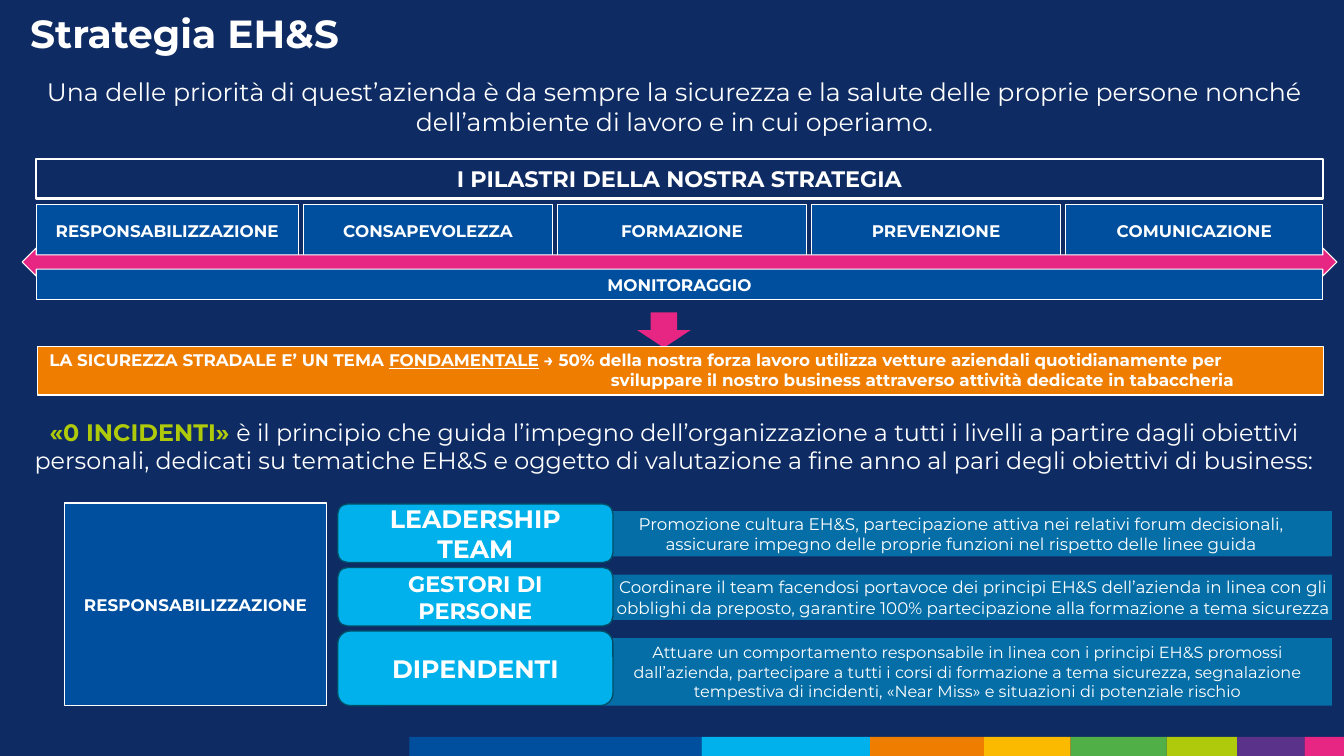
"""Build the EH&S strategy slide."""
from lxml.etree import SubElement
from pptx import Presentation
from pptx.dml.color import RGBColor
from pptx.enum.shapes import MSO_SHAPE
from pptx.enum.text import MSO_ANCHOR, MSO_AUTO_SIZE, PP_ALIGN
from pptx.oxml.ns import qn
from pptx.util import Inches, Pt

FONT = "Montserrat"
COLORS = {
    "navy": "0E2B63", "blue": "004F9F", "cyan": "00B1EB", "orange": "EF7D00",
    "yellow": "FBBA00", "green": "50AF47", "lime": "AFCA0B", "purple": "5A328A",
    "pink": "E72582", "white": "FFFFFF", "teal": "004E67",
}
WIDTH, HEIGHT = 13.33, 7.5
LEFT, BAND_WIDTH, PILLAR_GAP = 0.36, 12.76, 0.05
ROLE_LEFT, ROLE_TOP, ROLE_STEP, ROLE_WIDTH = 3.35, 5.0, 0.63, 2.73
PANEL_LEFT, PANEL_RIGHT, PANEL_DROP = 5.94, 13.21, 0.07
STRIP_TOP = 7.31

TITLE = "Strategia EH&S"
INTRO = [("Una delle priorità di quest’azienda è da sempre la sicurezza e la salute delle "
          "proprie persone nonché dell’ambiente di lavoro e in cui operiamo.", {})]
HEADING = "I PILASTRI DELLA NOSTRA STRATEGIA"
PILLARS = [("RESPONSABILIZZAZIONE", 2.6), ("CONSAPEVOLEZZA", 2.47), ("FORMAZIONE", 2.47),
           ("PREVENZIONE", 2.47), ("COMUNICAZIONE", 2.55)]
MONITORING = "MONITORAGGIO"
ROAD_SAFETY = [
    [("LA SICUREZZA STRADALE E’ UN TEMA ", {}), ("FONDAMENTALE", {"underline": True}),
     (" → 50% della nostra forza lavoro utilizza vetture aziendali quotidianamente per", {})],
    [("sviluppare il nostro business attraverso attività dedicate in tabaccheria", {})],
]
PRINCIPLE = [
    ("«0 INCIDENTI» ", {"bold": True, "color": "lime"}),
    ("è il principio che guida l’impegno dell’organizzazione a tutti i livelli a partire "
     "dagli obiettivi personali, dedicati su tematiche EH&S e oggetto di valutazione a fine "
     "anno al pari degli obiettivi di business:", {}),
]
ROLES = [
    {"name": "LEADERSHIP TEAM", "name_size": 18, "name_height": 0.58,
     "duty": "Promozione cultura EH&S, partecipazione attiva nei relativi forum decisionali, "
             "assicurare impegno delle proprie funzioni nel rispetto delle linee guida",
     "duty_size": 12, "duty_height": 0.45, "sides": (0.13, 0.21)},
    {"name": "GESTORI DI PERSONE", "name_size": 16, "name_height": 0.58,
     "duty": "Coordinare il team facendosi portavoce dei principi EH&S dell’azienda in linea "
             "con gli obblighi da preposto, garantire 100% partecipazione alla formazione a "
             "tema sicurezza",
     "duty_size": 12, "duty_height": 0.45, "sides": (0.16, 0)},
    {"name": "DIPENDENTI", "name_size": 18, "name_height": 0.74,
     "duty": "Attuare un comportamento responsabile in linea con i principi EH&S promossi "
             "dall’azienda, partecipare a tutti i corsi di formazione a tema sicurezza, "
             "segnalazione tempestiva di incidenti, «Near Miss» e situazioni di potenziale "
             "rischio",
     "duty_size": 11.5, "duty_height": 0.67, "sides": (0.12, 0.08)},
]
STRIP = [("blue", 4.06), ("cyan", 6.96), ("orange", 8.63), ("yellow", 9.76), ("green", 10.62),
         ("lime", 11.57), ("purple", 12.27), ("pink", 12.94)]


def rgb(name):
    """Return the named colour."""
    return RGBColor.from_string(COLORS[name])


def style(font, size, bold=False, color="white", underline=None):
    """Format a font."""
    font.name, font.size, font.bold, font.underline = FONT, Pt(size), bold, underline
    font.color.rgb = rgb(color)


def write(shape, paragraphs, size, bold=False, anchor=MSO_ANCHOR.MIDDLE,
          align=PP_ALIGN.CENTER, sides=(0.1, 0.1)):
    """Fill a shape with paragraphs made of (text, format) runs."""
    frame = shape.text_frame
    frame.word_wrap, frame.vertical_anchor = True, anchor
    frame.margin_left, frame.margin_right = (Inches(side) for side in sides)
    for index, runs in enumerate(paragraphs):
        paragraph = frame.add_paragraph() if index else frame.paragraphs[0]
        paragraph.alignment = align
        for text, options in runs:
            run = paragraph.add_run()
            run.text = text
            style(run.font, size, **{"bold": bold, **options})


def add_block(slide, kind, box, fill, line=None, line_width=1.0):
    """Add a filled preset shape with an optional outline."""
    shape = slide.shapes.add_shape(kind, *map(Inches, box))
    shape.shadow.inherit = False
    shape.fill.solid()
    shape.fill.fore_color.rgb = rgb(fill)
    if line:
        shape.line.color.rgb = rgb(line)
        shape.line.width = Pt(line_width)
    else:
        shape.line.fill.background()
    return shape


def add_label(slide, box, text, fill="blue", size=12, line="white", line_width=1.0,
              kind=MSO_SHAPE.RECTANGLE, anchor=MSO_ANCHOR.MIDDLE):
    """Add an outlined block with a bold label."""
    shape = add_block(slide, kind, box, fill, line, line_width)
    write(shape, [[(text, {})]], size, bold=True, anchor=anchor)


def add_text(slide, box, runs, size):
    """Add a centred text box."""
    shape = slide.shapes.add_textbox(*map(Inches, box))
    write(shape, [runs], size, anchor=MSO_ANCHOR.TOP)


def add_title(slide):
    """Place and format the title placeholder."""
    title = slide.shapes.title
    title.left, title.top, title.width, title.height = map(Inches, (0.19, 0.14, 9.55, 0.54))
    title.text_frame.auto_size = MSO_AUTO_SIZE.NONE
    write(title, [[(TITLE, {})]], 28, True, MSO_ANCHOR.TOP, PP_ALIGN.LEFT, (0.11, 0))
    title.text_frame.margin_top = title.text_frame.margin_bottom = 0
    title.text_frame.paragraphs[0].line_spacing = 0.9


def add_strategy(slide):
    """Draw the pillars, the arrows and the road safety band."""
    add_label(slide, (LEFT, 1.58, BAND_WIDTH, 0.39), HEADING, "navy", 16, line_width=1.5)
    left = LEFT
    for name, width in PILLARS:
        add_label(slide, (left, 2.03, width, 0.51), name)
        left += width + PILLAR_GAP
    add_label(slide, (LEFT, 2.6, BAND_WIDTH, 0.37), MONITORING, anchor=MSO_ANCHOR.BOTTOM)
    add_block(slide, MSO_SHAPE.LEFT_RIGHT_ARROW, (0.22, 2.46, 13.04, 0.28), "pink", "white", 0.75)
    add_block(slide, MSO_SHAPE.DOWN_ARROW, (6.32, 3.1, 0.53, 0.35), "pink")
    band = add_block(slide, MSO_SHAPE.RECTANGLE, (0.37, 3.44, BAND_WIDTH, 0.48), "orange", "white")
    write(band, ROAD_SAFETY, 12, True, MSO_ANCHOR.BOTTOM, PP_ALIGN.LEFT, (0.12, 0.1))
    second = band.text_frame.paragraphs[1]
    second._p.get_or_add_pPr().set("marL", str(Inches(5.57)))


def add_roles(slide):
    """Draw the role rows beside the responsibility block."""
    add_label(slide, (0.64, 4.99, 2.6, 2.01), PILLARS[0][0])
    for row, role in enumerate(ROLES):
        top = ROLE_TOP + row * ROLE_STEP
        panel = add_block(slide, MSO_SHAPE.RECTANGLE,
                          (PANEL_LEFT, top + PANEL_DROP, PANEL_RIGHT - PANEL_LEFT,
                           role["duty_height"]), "cyan")
        color = panel.fill._xPr.find(qn("a:solidFill"))[0]
        SubElement(color, qn("a:alpha")).set("val", "50000")
        write(panel, [[(role["duty"], {})]], role["duty_size"], sides=role["sides"])
        add_label(slide, (ROLE_LEFT, top, ROLE_WIDTH, role["name_height"]), role["name"],
                  "cyan", role["name_size"], "teal", kind=MSO_SHAPE.ROUNDED_RECTANGLE)


def add_strip(slide):
    """Draw the coloured strip along the bottom edge."""
    edges = [left for _, left in STRIP] + [WIDTH]
    for (color, left), right in zip(STRIP, edges[1:]):
        add_block(slide, MSO_SHAPE.RECTANGLE,
                  (left, STRIP_TOP, right - left, HEIGHT - STRIP_TOP), color)


def main():
    """Assemble and save the presentation."""
    presentation = Presentation()
    presentation.slide_width, presentation.slide_height = Inches(WIDTH), Inches(HEIGHT)
    slide = presentation.slides.add_slide(presentation.slide_layouts[5])
    slide.background.fill.solid()
    slide.background.fill.fore_color.rgb = rgb("navy")
    add_strip(slide)
    add_title(slide)
    add_text(slide, (0, 0.71, 13.38, 0.71), INTRO, 18)
    add_strategy(slide)
    add_text(slide, (0.06, 4.09, 13.26, 0.67), PRINCIPLE, 17)
    add_roles(slide)
    presentation.save("out.pptx")


if __name__ == "__main__":
    main()
